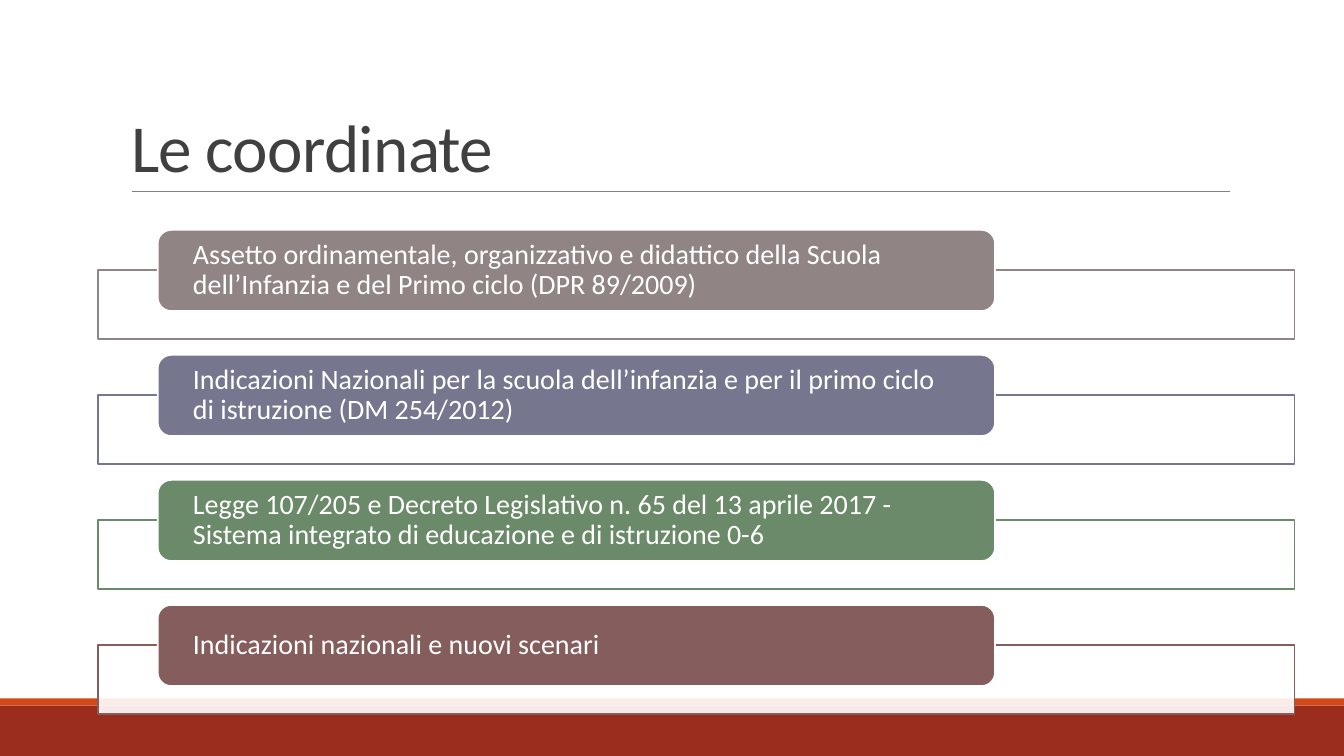
from pptx import Presentation
from pptx import util as u
from pptx.dml.color import RGBColor
from pptx.enum import shapes, text
from pptx.oxml.ns import qn
from lxml import etree

COLORS = {
    "white": "FFFFFF", "title": "404040", "rule": "808080",
    "footer": "9B2D1F", "stripe": "D34817",
    "taupe": "918485", "slate": "76778E", "green": "6A8A69", "maroon": "855D5D",
}
ITEMS = [
    ("taupe", "Assetto ordinamentale, organizzativo e didattico della Scuola "
              "dell’Infanzia e del Primo ciclo (DPR 89/2009)"),
    ("slate", "Indicazioni Nazionali per la scuola dell’infanzia e per il primo "
              "ciclo di istruzione (DM 254/2012)"),
    ("green", "Legge 107/205 e Decreto Legislativo n. 65 del 13 aprile 2017 - "
              "Sistema integrato di educazione e di istruzione 0-6"),
    ("maroon", "Indicazioni nazionali e nuovi scenari"),
]
WIDTH, HEIGHT = 960, 540
FIRST_TAB, PITCH = 164.2, 89.3
FRAME_DROP = 28.6


def rgb(name):
    return RGBColor.from_string(COLORS[name])


class SlideBuilder:
    font = "Calibri"

    def __init__(self, s):
        self.s = s

    def set_text(self, sp, words, size, color, frame, paragraph):
        """Set the text of sp; frame and paragraph are dicts of attributes."""
        tf = sp.text_frame
        p = tf.paragraphs[0]
        r = p.add_run()
        r.text = words
        for target, values in (
            (tf, {"word_wrap": True, "auto_size": text.MSO_AUTO_SIZE.NONE, **frame}),
            (p, {"alignment": text.PP_ALIGN.LEFT, **paragraph}),
            (r.font, {"name": self.font, "size": u.Pt(size)}),
        ):
            for key, value in values.items():
                setattr(target, key, value)
        r.font.color.rgb = rgb(color)
        return r

    def title(self, words, *box):
        sp = self.s.shapes.title
        for key, value in zip(("left", "top", "width", "height"), box):
            setattr(sp, key, u.Pt(value))
        r = self.set_text(sp, words, 48, "title",
                          {"vertical_anchor": text.MSO_ANCHOR.BOTTOM},
                          {"line_spacing": 0.85})
        r._r.get_or_add_rPr().set("spc", "-50")

    def box(self, kind, fill, *box, line=None, alpha=None):
        """Add a preset shape; alpha is the fill opacity in percent."""
        sp = self.s.shapes.add_shape(kind, *map(u.Pt, box))
        sp.shadow.inherit = False
        sp.fill.solid()
        sp.fill.fore_color.rgb = rgb(fill)
        if alpha is not None:
            color = sp._element.spPr.find(qn("a:solidFill")).find(qn("a:srgbClr"))
            etree.SubElement(color, qn("a:alpha"), val=str(alpha * 1000))
        if line:
            sp.line.color.rgb = rgb(line)
            sp.line.width = u.Pt(1.25)
        else:
            sp.line.fill.background()
        return sp

    def rule(self, x1, x2, y):
        c = self.s.shapes.add_connector(
            shapes.MSO_CONNECTOR.STRAIGHT, *map(u.Pt, (x1, y, x2, y)))
        c.line.color.rgb = rgb("rule")
        c.line.width = u.Pt(0.5)
        etree.SubElement(c._element.spPr, qn("a:effectLst"))

    def item(self, color, words, top):
        """Add an outlined frame with a rounded, filled tab over its top edge."""
        self.box(shapes.MSO_SHAPE.RECTANGLE, "white",
                 70.1, top + FRAME_DROP, 854.6, 49.6, line=color, alpha=90)
        tab = self.box(shapes.MSO_SHAPE.ROUNDED_RECTANGLE, color,
                       112.6, top, 598.2, 58, line="white")
        self.set_text(tab, words, 20, "white",
                      {"vertical_anchor": text.MSO_ANCHOR.MIDDLE,
                       "margin_left": u.Pt(22.4), "margin_right": u.Pt(22.4),
                       "margin_top": 0, "margin_bottom": 0},
                      {"line_spacing": 0.9})


def main():
    prs = Presentation()
    prs.slide_width, prs.slide_height = u.Pt(WIDTH), u.Pt(HEIGHT)
    slide = SlideBuilder(prs.slides.add_slide(prs.slide_layouts[5]))
    slide.box(shapes.MSO_SHAPE.RECTANGLE, "footer", 0, 504, WIDTH, 36)
    slide.box(shapes.MSO_SHAPE.RECTANGLE, "stripe", 0, 498.8, WIDTH, 5.2)
    slide.rule(94.3, 878.8, 136.8)
    slide.title("Le coordinate", 86.4, 22.6, 792, 114.2)
    for i, (color, words) in enumerate(ITEMS):
        slide.item(color, words, FIRST_TAB + i * PITCH)
    prs.save("out.pptx")


if __name__ == "__main__":
    main()
